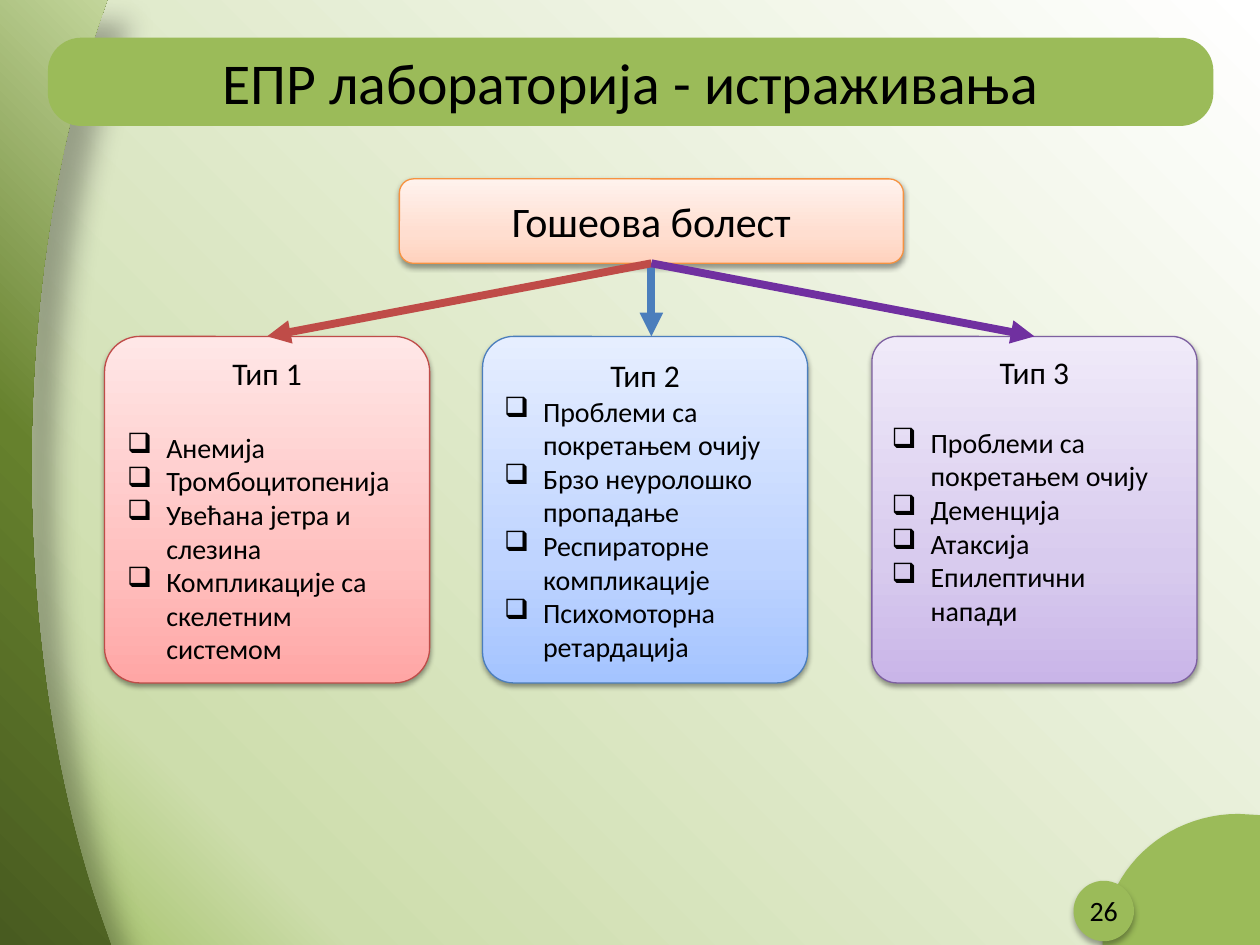
from lxml import etree
from pptx import Presentation
from pptx import util as u
from pptx.dml.color import RGBColor
from pptx.enum import shapes, text
from pptx.oxml.ns import qn

FONT = "Calibri"
C = {"green": "9BBB59", "black": "000000", "orange": "F69240",
     "red": "BF4C48", "blue": "4B7EBC", "purple": "7D60A0", "violet": "7030A0"}
BACKDROP = [(0, "FFFFFF"), (84, "CDDDAC"), (100, C["green"])]
BAND = [(0, "485B20"), (50, "66812D"), (100, "C3D69B")]
PEACH = [(0, "FFD2BD"), (35, "FFDED0"), (100, "FFF2ED")]
# Shadows: opacity %, blur pt, distance pt, angle
CARD_SHADOW = (38, 3.1, 1.6, 90)
CORNER_SHADOW = (32, 3.5, 2.2, 90)
BAND_SHADOW = (30, 15, 18, 45)

# Title, gradient, line, arrow, corner, gap after title (pt), bottom inset, items
TYPES = [
    ("Тип 1", [(0, "FFA6A5"), (35, "FFC0BF"), (100, "FFE7E7")], "red", "red",
     0.108, 22, 0.05,
     ["Анемија", "Тромбоцитопенија", "Увећана јетра и слезина",
      "Компликације са скелетним системом"]),
    ("Тип 2", [(0, "A4C4FF"), (35, "BFD4FF"), (100, "E6EEFF")], "blue", "blue",
     0.095, 0, 0.05,
     ["Проблеми са покретањем очију", "Брзо неуролошко пропадање",
      "Респираторне компликације", "Психомоторна ретардација"]),
    ("Тип 3", [(0, "C9B5E8"), (35, "D8CBEE"), (100, "F0EAF9")], "purple", "violet",
     0.077, 19.5, 0.36,
     ["Проблеми са покретањем очију", "Деменција", "Атаксија",
      "Епилептични напади"]),
]
CARD_LEFTS = [0.83, 3.83, 6.92]


def rgb(value):
    return RGBColor.from_string(value)


def sub(parent, tag, **attrs):
    return etree.SubElement(parent, qn(tag), {k: str(v) for k, v in attrs.items()})


def set_gradient(fill, parent, stops, angle):
    """Swap the solid fill under parent for a linear gradient."""
    fill.solid()
    solid = parent.find(qn("a:solidFill"))
    grad = etree.Element(qn("a:gradFill"), rotWithShape="1")
    stop_list = sub(grad, "a:gsLst")
    for position, color in stops:
        stop = sub(stop_list, "a:gs", pos=position * 1000)
        sub(stop, "a:srgbClr", val=color)
    sub(grad, "a:lin", ang=angle * 60000, scaled=0)
    parent.replace(solid, grad)


def style(sp, fill, angle=270, line=None, shadow=None):
    if isinstance(fill, str):
        sp.fill.solid()
        sp.fill.fore_color.rgb = rgb(fill)
    else:
        set_gradient(sp.fill, sp._element.spPr, fill, angle)
    if line:
        sp.line.color.rgb = rgb(line)
        sp.line.width = u.Pt(0.75)
    else:
        sp.line.fill.background()
    sp.shadow.inherit = False
    if shadow:
        opacity, blur, dist, direction = shadow
        effects = sp._element.spPr.find(qn("a:effectLst"))
        outer = sub(effects, "a:outerShdw", blurRad=int(u.Pt(blur)),
                    dist=int(u.Pt(dist)), dir=direction * 60000, rotWithShape=0)
        color = sub(outer, "a:srgbClr", val=C["black"])
        sub(color, "a:alpha", val=opacity * 1000)


def add_box(s, kind, box, fill, corner=None, **look):
    sp = s.shapes.add_shape(kind, *map(u.Inches, box))
    if corner is not None:
        sp.adjustments[0] = corner
    style(sp, fill, **look)
    sp.text_frame.word_wrap = True
    sp.text_frame.vertical_anchor = text.MSO_ANCHOR.MIDDLE
    return sp


def write(p, words, size, align=text.PP_ALIGN.CENTER):
    p.alignment = align
    r = p.add_run()
    r.text = words
    r.font.name = FONT
    r.font.size = u.Pt(size)
    r.font.color.rgb = rgb(C["black"])


def add_bullet(p):
    indent = int(u.Inches(0.31))
    props = p._p.get_or_add_pPr()
    props.set("marL", str(indent))
    props.set("indent", str(-indent))
    sub(props, "a:buChar", char="❑")


def bezier(p0, p1, p2, p3, steps=24):
    """Points along a cubic curve, without its first point."""
    points = []
    for i in range(1, steps + 1):
        t = i / steps
        weights = ((1 - t) ** 3, 3 * t * (1 - t) ** 2, 3 * t * t * (1 - t), t ** 3)
        points.append(tuple(sum(w * q[axis] for w, q in zip(weights, (p0, p1, p2, p3)))
                            for axis in (0, 1)))
    return points


def add_outline(s, box, points, fill, **look):
    """Draw a closed outline from points relative to the box."""
    x, y = box[:2]
    points = [(u.Inches(x + px), u.Inches(y + py)) for px, py in points]
    builder = s.shapes.build_freeform(*points[0])
    builder.add_line_segments(points[1:], close=True)
    style(builder.convert_to_shape(), fill, **look)


def add_corner(s, box):
    w, h = box[2:]
    arc = bezier((0, h), (0, 0.46), (0.49, 0), (1.08, 0))
    add_outline(s, box, arc + [(w, 0.01), (w, h), (0, h)],
                C["green"], shadow=CORNER_SHADOW)


def add_side_band(s, box):
    w, h = box[2:]
    upper = bezier((0.82, 0.09), (0.45, 1.12), (0.25, 2.39), (0.25, 3.71))
    lower = bezier((0.25, 3.71), (0.25, 5.03), (0.45, 6.29), (0.82, 7.33))
    points = [(0, 0), (0.85, 0), (0.82, 0.09)] + upper + lower + [(w, h), (0, h)]
    add_outline(s, box, points, BAND, angle=315, shadow=BAND_SHADOW)


def add_page_number(s, box, number):
    x, y, w, h = box
    tb = s.shapes.add_textbox(*map(u.Inches, (x - 0.05, y + 0.05, w + 0.1, h - 0.15)))
    tf = tb.text_frame
    tf.word_wrap = True
    write(tf.paragraphs[0], number, 16)


def add_label(s, box, words, size, fill, **look):
    sp = add_box(s, shapes.MSO_SHAPE.ROUNDED_RECTANGLE, box, fill, **look)
    write(sp.text_frame.paragraphs[0], words, size)
    return sp


def add_type_card(s, box, title, fill, line, corner, gap, bottom, items):
    sp = add_label(s, box, title, 18, fill, corner=corner, line=C[line],
                   shadow=CARD_SHADOW)
    tf = sp.text_frame
    tf.margin_bottom = u.Inches(bottom)
    tf.paragraphs[0].space_after = u.Pt(gap)
    for item in items:
        p = tf.add_paragraph()
        add_bullet(p)
        write(p, item, 16, text.PP_ALIGN.LEFT)
    return sp


def add_arrow(s, start, end, color, upright=False):
    """Run from the bottom of start to end: its top centre, or straight down."""
    x = start.left + start.width // 2
    arrow = s.shapes.add_connector(shapes.MSO_CONNECTOR.STRAIGHT,
                                   x, start.top + start.height, x, end.top)
    arrow.begin_connect(start, 2)
    if not upright:
        arrow.end_connect(end, 0)
    arrow.line.color.rgb = rgb(color)
    arrow.line.width = u.Pt(4.5)
    sub(arrow.line._get_or_add_ln(), "a:tailEnd", type="triangle")
    sub(arrow._element.spPr, "a:effectLst")


def add_disease_tree(s, box):
    x, y = box[:2]
    root = add_label(s, (x + 2.34, y, 4, 0.67), "Гошеова болест", 24, PEACH,
                     line=C["orange"], shadow=CARD_SHADOW)
    cards = []
    for left, (title, fill, line, _, *rest) in zip(CARD_LEFTS, TYPES):
        card_box = (x + left - CARD_LEFTS[0], y + 1.25, 2.58, 2.75)
        cards.append(add_type_card(s, card_box, title, fill, line, *rest))
    for i in (1, 0, 2):
        add_arrow(s, root, cards[i], C[TYPES[i][3]], upright=i == 1)


def main():
    prs = Presentation()
    prs.slide_width, prs.slide_height = u.Inches(10), u.Inches(7.5)
    s = prs.slides.add_slide(prs.slide_layouts[6])
    fill = s.background.fill
    fill.solid()
    set_gradient(fill, s._element.find(".//" + qn("p:bgPr")), BACKDROP, 135)
    badge = (8.52, 6.99, 0.48, 0.48)
    add_corner(s, (8.75, 6.46, 1.25, 1.04))
    add_box(s, shapes.MSO_SHAPE.OVAL, badge, C["green"], shadow=CORNER_SHADOW)
    add_side_band(s, (0, 0, 0.88, 7.5))
    add_page_number(s, badge, "26")
    add_label(s, (0.38, 0.3, 9.25, 0.7), "ЕПР лабораторија - истраживања", 33,
              C["green"], corner=0.375)
    add_disease_tree(s, (0.83, 1.42, 8.67, 4))
    prs.save("out.pptx")


if __name__ == "__main__":
    main()
